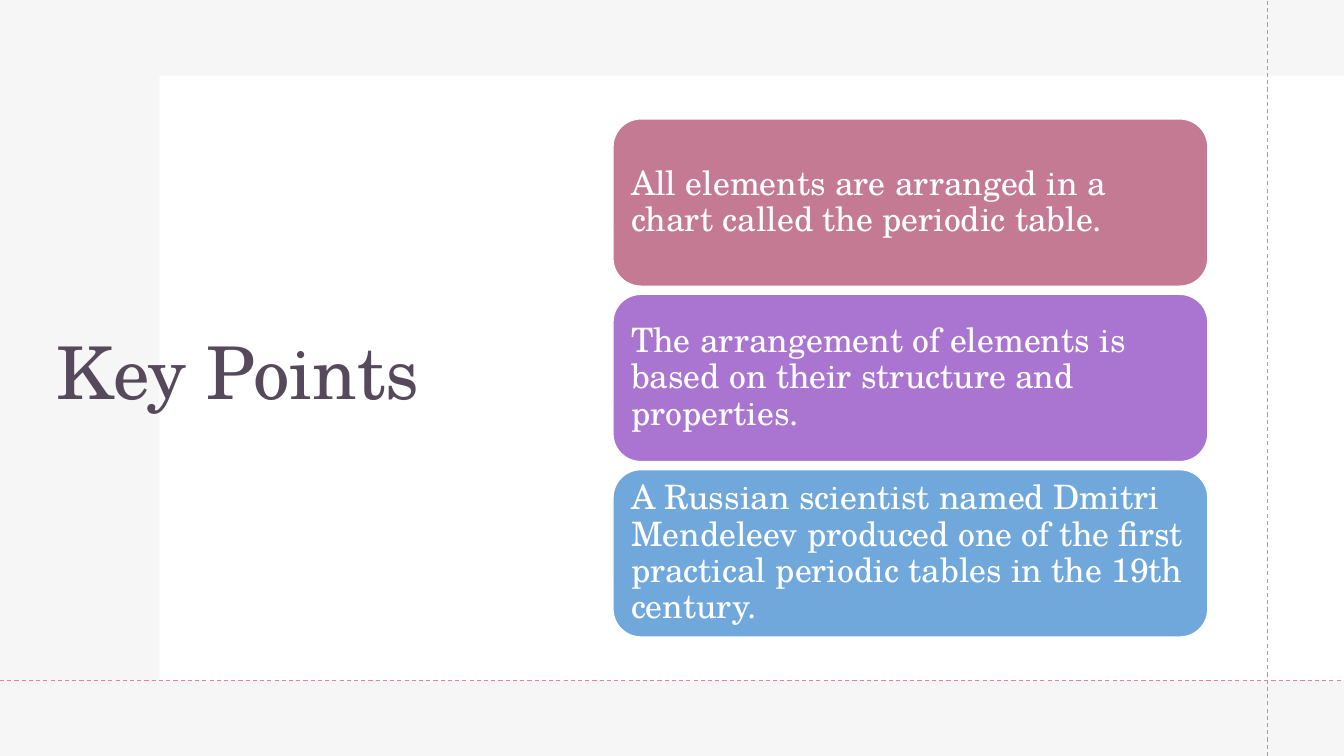
import pptx
import pptx.util
import pptx.dml.color
import pptx.enum.dml
import pptx.enum.shapes
import pptx.enum.text
import pptx.oxml.ns
from lxml import etree

Inches = pptx.util.Inches
Pt = pptx.util.Pt
RGBColor = pptx.dml.color.RGBColor
SHAPE = pptx.enum.shapes.MSO_SHAPE
ALIGN = pptx.enum.text.PP_ALIGN
MIDDLE = pptx.enum.text.MSO_ANCHOR.MIDDLE

WIDE, HIGH = 13.33, 7.5
FONT = "TeX Gyre Schola"
WHITE = RGBColor(0xFF, 0xFF, 0xFF)
PALE = RGBColor(0xF6, 0xF6, 0xF6)
PLUM = RGBColor(0x57, 0x49, 0x5C)
PINK = RGBColor(0xF0, 0x7C, 0x98)
GREY = RGBColor(0xA0, 0xA0, 0xA0)
ROSE = RGBColor(0xC4, 0x7A, 0x93)
VIOLET = RGBColor(0xA9, 0x75, 0xD0)
BLUE = RGBColor(0x70, 0xA8, 0xDB)

POINTS = [
    ("All elements are arranged in a chart called the periodic table.", ROSE),
    ("The arrangement of elements is based on their structure and properties.", VIOLET),
    ("A Russian scientist named Dmitri Mendeleev produced one of the first "
     "practical periodic tables in the 19th century.", BLUE),
]


def style(frame, text, size, color):
    frame.text = text
    frame.word_wrap = True
    frame.auto_size = pptx.enum.text.MSO_AUTO_SIZE.NONE
    frame.vertical_anchor = MIDDLE
    para = frame.paragraphs[0]
    para.alignment = ALIGN.LEFT
    para.line_spacing = 0.9
    para.font.name = FONT
    para.font.size = Pt(size)
    para.font.color.rgb = color


def add_block(slide, kind, box, color):
    shape = slide.shapes.add_shape(kind, *map(Inches, box))
    shape.shadow.inherit = False
    shape.fill.solid()
    shape.fill.fore_color.rgb = color
    shape.line.fill.background()
    return shape


def add_dash(slide, start, end, color):
    line = slide.shapes.add_connector(
        pptx.enum.shapes.MSO_CONNECTOR.STRAIGHT, *map(Inches, start + end))
    line.line.color.rgb = color
    line.line.width = Pt(0.75)
    line.line.dash_style = pptx.enum.dml.MSO_LINE.DASH
    etree.SubElement(line.element.spPr, pptx.oxml.ns.qn("a:effectLst"))


def add_frame(slide, box):
    """Draw the pale backdrop, the white panel and the dashed guides."""
    left, top, width, height = box
    slide.background.fill.solid()
    slide.background.fill.fore_color.rgb = PALE
    edge = top + height * 0.9
    panel = (left + 1.58, top + height * 0.1, width - 1.58, height * 0.8)
    add_block(slide, SHAPE.RECTANGLE, panel, WHITE)
    guide = left + 12.57
    add_dash(slide, (guide, top + height), (guide, top), GREY)
    add_dash(slide, (left, edge), (left + width, edge), PINK)


def add_title(slide, box, text):
    title = slide.shapes.title
    title.left, title.top, title.width, title.height = map(Inches, box)
    style(title.text_frame, text, 52, PLUM)
    # Bring the title in front of the white panel
    title.element.getparent().append(title.element)


def add_points(slide, box, points, gap=0.08):
    """Stack one rounded card per point, evenly filling the box."""
    left, top, width, height = box
    tall = (height - gap * (len(points) - 1)) / len(points)
    for row, (text, color) in enumerate(points):
        spot = (left, top + row * (tall + gap), width, tall)
        card = add_block(slide, SHAPE.ROUNDED_RECTANGLE, spot, color)
        card.line.color.rgb = WHITE
        card.line.width = Pt(1)
        frame = card.text_frame
        frame.margin_left = frame.margin_right = Inches(0.1)
        frame.margin_top = frame.margin_bottom = Inches(0.1)
        style(frame, text, 24, WHITE)


def main():
    deck = pptx.Presentation()
    deck.slide_width, deck.slide_height = Inches(WIDE), Inches(HIGH)
    slide = deck.slides.add_slide(deck.slide_layouts[5])
    add_frame(slide, (0, 0, WIDE, HIGH))
    add_title(slide, (0.46, 1.11, 5.32, 5.24), "Key Points")
    add_points(slide, (6.08, 1.18, 5.9, 5.14), POINTS)
    deck.save("out.pptx")


if __name__ == "__main__":
    main()
